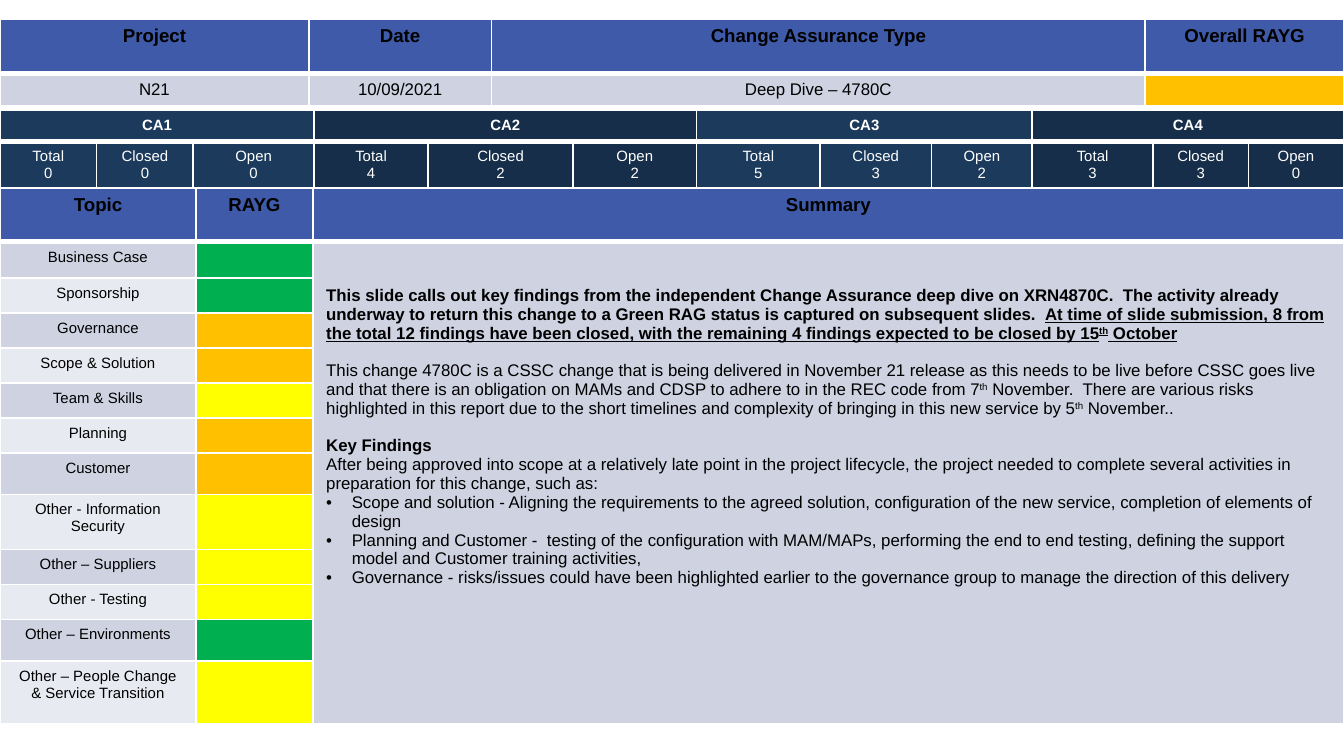
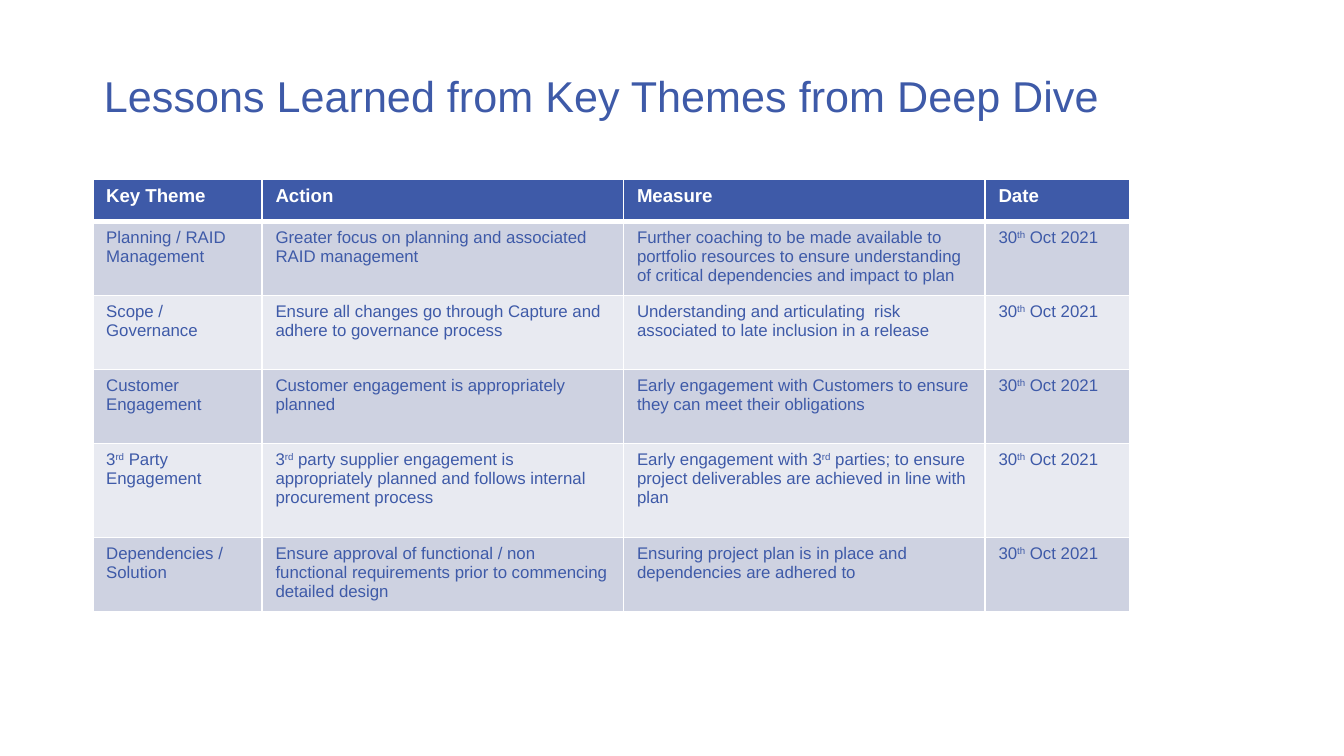
from dataclasses import dataclass

from lxml.etree import SubElement as Sub
from pptx import Presentation
from pptx.dml.color import RGBColor as Rgb
from pptx.enum.text import MSO_ANCHOR as Anchor, PP_ALIGN as Align
from pptx.oxml.ns import qn
from pptx.util import Inches, Pt


@dataclass(frozen=True)
class Theme:
    font: str = "Arial"
    blue: str = "3E5AA8"
    navy: tuple = ("1C3B5C", "162E49")
    bands: tuple = ("CED2E1", "E8EAF1")
    white: str = "FFFFFF"
    black: str = "000000"
    green: str = "00B050"
    amber: str = "FFC000"
    yellow: str = "FFFF00"
    title: float = 23.1
    head: float = 10
    body: float = 9
    small: float = 8
    gap: float = 10
    thin: float = 1
    thick: float = 3


T = Theme()

TALLY = {
    "CA1": (0, 0, 0),
    "CA2": (4, 2, 2),
    "CA3": (5, 3, 2),
    "CA4": (3, 3, 0),
}

TOPICS = [
    ("Business Case", T.green, 0.27),
    ("Sponsorship", T.green, 0.26),
    ("Governance", T.amber, 0.26),
    ("Scope & Solution", T.amber, 0.26),
    ("Team & Skills", T.yellow, 0.26),
    ("Planning", T.amber, 0.26),
    ("Customer", T.amber, 0.31),
    ("Other - Information Security", T.yellow, 0.41),
    ("Other – Suppliers", T.yellow, 0.26),
    ("Other - Testing", T.yellow, 0.26),
    ("Other – Environments", T.green, 0.31),
    ("Other – People Change & Service Transition", T.yellow, 0.47),
]

# Text between carets is raised.
INTRO = (
    "This slide calls out key findings from the independent Change Assurance "
    "deep dive on XRN4870C.  The activity already underway to return this "
    "change to a Green RAG status is captured on subsequent slides.  "
)
STATUS = (
    "At time of slide submission, 8 from the total 12 findings have been "
    "closed, with the remaining 4 findings expected to be closed by "
    "15^th^ October"
)
SCOPE = (
    "This change 4780C is a CSSC change that is being delivered in November "
    "21 release as this needs to be live before CSSC goes live and that there "
    "is an obligation on MAMs and CDSP to adhere to in the REC code from "
    "7^th^ November.  There are various risks highlighted in this report due "
    "to the short timelines and complexity of bringing in this new service by "
    "5^th^ November.."
)
LEAD = (
    "After being approved into scope at a relatively late point in the "
    "project lifecycle, the project needed to complete several activities in "
    "preparation for this change, such as:"
)
FINDS = [
    "Scope and solution - Aligning the requirements to the agreed solution, "
    "configuration of the new service, completion of elements of design",
    "Planning and Customer -  testing of the configuration with MAM/MAPs, "
    "performing the end to end testing, defining the support model and "
    "Customer training activities,",
    "Governance - risks/issues could have been highlighted earlier to the "
    "governance group to manage the direction of this delivery",
]

DUE = "30^th^ Oct 2021"
LESSONS = [
    ("Planning / RAID Management",
     "Greater focus on planning and associated RAID management",
     "Further coaching to be made available to portfolio resources to ensure "
     "understanding of critical dependencies and impact to plan"),
    ("Scope / Governance",
     "Ensure all changes go through Capture and adhere to governance process",
     "Understanding and articulating  risk associated to late inclusion in a "
     "release"),
    ("Customer Engagement",
     "Customer engagement is appropriately planned",
     "Early engagement with Customers to ensure they can meet their "
     "obligations"),
    ("3^rd^ Party Engagement",
     "3^rd^ party supplier engagement is appropriately planned and follows "
     "internal procurement process",
     "Early engagement with 3^rd^ parties; to ensure project deliverables are "
     "achieved in line with plan"),
    ("Dependencies / Solution",
     "Ensure approval of functional / non functional requirements prior to "
     "commencing detailed design",
     "Ensuring project plan is in place and dependencies are adhered to"),
]


def write(para, text, size, color=T.black, **extra):
    """Add text as runs, raising the parts between carets."""
    form = {"name": T.font, "size": Pt(size), "bold": False, **extra}
    for i, part in enumerate(text.split("^")):
        run = para.add_run()
        run.text = part
        for key, val in form.items():
            setattr(run.font, key, val)
        run.font.color.rgb = Rgb.from_string(color)
        if i % 2:
            run.font._element.set("baseline", "30000")


def paint(cell, color):
    cell.fill.solid()
    cell.fill.fore_color.rgb = Rgb.from_string(color)


def put(cell, text, fill, size, align=Align.CENTER, **form):
    """Fill a cell and write one paragraph per line of text."""
    paint(cell, fill)
    frame = cell.text_frame
    for i, line in enumerate(text.split("\n")):
        para = frame.add_paragraph() if i else frame.paragraphs[0]
        para.alignment = align
        write(para, line, size, **form)


def edge(cell, row):
    """Draw white borders, thick between the head row and the next."""
    heavy = {"B": row == 0, "T": row == 1}
    props = cell._tc.get_or_add_tcPr()
    for i, side in enumerate("LRTB"):
        width = T.thick if heavy.get(side) else T.thin
        line = Sub(props, qn(f"a:ln{side}"), w=str(Pt(width)))
        solid = Sub(line, qn("a:solidFill"))
        Sub(solid, qn("a:srgbClr"), val=T.white)
        props.insert(i, line)


def grid(slide, box, cols, rows):
    """Add a plain table whose columns and rows share out the box."""
    width, height = box[2:]
    table = slide.shapes.add_table(
        len(rows), len(cols), *map(Inches, box)).table
    table.first_row = table.horz_banding = False
    for col, part in zip(table.columns, cols):
        col.width = Inches(width * part / sum(cols))
    for row, part in zip(table.rows, rows):
        row.height = Inches(height * part / sum(rows))
    for r in range(len(rows)):
        for c in range(len(cols)):
            cell = table.cell(r, c)
            edge(cell, r)
            para = cell.text_frame.paragraphs[0]._p
            Sub(para, qn("a:endParaRPr"), sz=str(int(T.small * 100)))
    return table


def heads(table, names, **form):
    for c, name in enumerate(names):
        put(table.cell(0, c), name, T.blue, T.head, bold=True, **form)


def project(slide, box):
    table = grid(slide, box, [2.3, 1.36, 4.87, 1.48], [0.41, 0.24])
    heads(table, ["Project", "Date", "Change Assurance Type", "Overall RAYG"])
    for c, text in enumerate(["N21", "10/09/2021", "Deep Dive – 4780C"]):
        put(table.cell(1, c), text, T.bands[0], T.body)
    paint(table.cell(1, 3), T.amber)


def tally(slide, box):
    cols = [0.72, 0.72, 0.9, 0.85, 1.08, 0.92,
            0.92, 0.83, 0.75, 0.9, 0.71, 0.71]
    table = grid(slide, box, cols, [0.23, 0.35])
    for i, (name, counts) in enumerate(TALLY.items()):
        fill, first = T.navy[i % 2], 3 * i
        head = table.cell(0, first)
        head.merge(table.cell(0, first + 2))
        put(head, name, fill, T.small, color=T.white, bold=True)
        head.vertical_anchor = Anchor.MIDDLE
        for j, label in enumerate(["Total", "Closed", "Open"]):
            cell = table.cell(1, first + j)
            put(cell, f"{label}\n{counts[j]}", fill, T.small, color=T.white)
            cell.vertical_anchor = Anchor.MIDDLE


def bullet(para):
    props = para._p.get_or_add_pPr()
    indent = Inches(0.19)
    props.set("marL", str(indent))
    props.set("indent", str(-indent))
    Sub(props, qn("a:buFont"), typeface=T.font)
    Sub(props, qn("a:buChar"), char="•")


def summary(cell):
    paint(cell, T.bands[0])
    cell.margin_top = Inches(0.33)
    frame = cell.text_frame
    para = frame.paragraphs[0]
    write(para, INTRO, T.body, bold=True)
    write(para, STATUS, T.body, bold=True, underline=True)
    for text, bold in [(SCOPE, False), ("Key Findings", True)]:
        para = frame.add_paragraph()
        para.space_before = Pt(T.gap)
        write(para, text, T.body, bold=bold)
    write(frame.add_paragraph(), LEAD, T.body)
    for text in FINDS:
        para = frame.add_paragraph()
        bullet(para)
        write(para, text, T.body)


def topics(slide, box):
    rows = [0.4] + [high for _, _, high in TOPICS]
    table = grid(slide, box, [1.46, 0.87, 7.68], rows)
    heads(table, ["Topic", "RAYG", "Summary"])
    for r, (name, rating, _) in enumerate(TOPICS, 1):
        put(table.cell(r, 0), name, T.bands[(r - 1) % 2], T.small)
        paint(table.cell(r, 1), rating)
    cell = table.cell(1, 2)
    cell.merge(table.cell(len(TOPICS), 2))
    summary(cell)


def title(slide, box, text):
    shape = slide.shapes.title
    for key, val in zip(("left", "top", "width", "height"), box):
        setattr(shape, key, Inches(val))
    frame = shape.text_frame
    frame.word_wrap = True
    frame.vertical_anchor = Anchor.MIDDLE
    para = frame.paragraphs[0]
    para.alignment = Align.CENTER
    write(para, text, T.title, color=T.blue)


def lessons(slide, box):
    rows = [0.32, 0.55, 0.55, 0.55, 0.7, 0.55]
    table = grid(slide, box, [1.26, 2.69, 2.69, 1.08], rows)
    heads(table, ["Key Theme", "Action", "Measure", "Date"],
          color=T.white, align=Align.LEFT)
    for r, lesson in enumerate(LESSONS, 1):
        for c, text in enumerate((*lesson, DUE)):
            put(table.cell(r, c), text, T.bands[(r - 1) % 2], T.body,
                Align.LEFT, color=T.blue)


def main():
    deck = Presentation()
    deck.slide_width = Inches(10)
    deck.slide_height = deck.slide_width * 9 // 16
    plain, titled = deck.slide_layouts[6], deck.slide_layouts[5]

    report = deck.slides.add_slide(plain)
    project(report, (0, 0.14, 10, 0.65))
    tally(report, (0, 0.82, 10, 0.58))
    topics(report, (0, 1.4, 10, 3.99))

    review = deck.slides.add_slide(titled)
    title(review, (0.64, 0.49, 7.77, 0.44),
          "Lessons Learned from Key Themes from Deep Dive ")
    lessons(review, (0.69, 1.33, 7.72, 3.22))
    deck.save("out.pptx")


if __name__ == "__main__":
    main()
